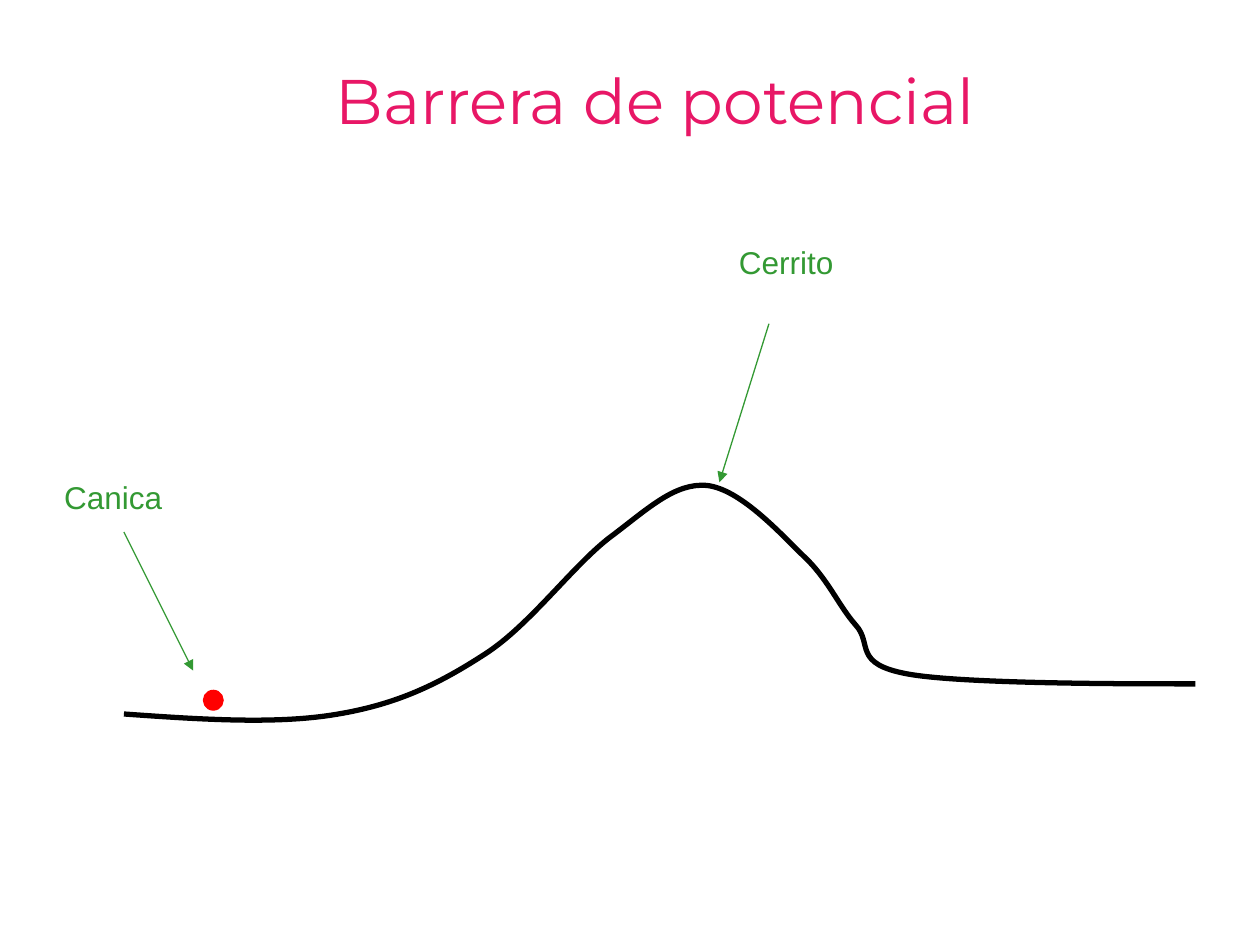
from pptx import Presentation
from pptx.dml.color import RGBColor
from pptx.enum.shapes import MSO_CONNECTOR, MSO_SHAPE
from pptx.enum.text import MSO_AUTO_SIZE, PP_ALIGN
from pptx.oxml.ns import qn
from pptx.util import Pt
from lxml import etree

PINK = RGBColor(0xE8, 0x17, 0x66)
GREEN = RGBColor(0x33, 0x99, 0x33)
RED = RGBColor(0xFF, 0x00, 0x00)
BLACK = RGBColor(0x00, 0x00, 0x00)
STRAIGHT = MSO_CONNECTOR.STRAIGHT
OVAL = MSO_SHAPE.OVAL
CENTER, LEFT = PP_ALIGN.CENTER, PP_ALIGN.LEFT
FIXED, GROW = MSO_AUTO_SIZE.NONE, MSO_AUTO_SIZE.SHAPE_TO_FIT_TEXT

deck = Presentation()
deck.slide_width, deck.slide_height = Pt(720), Pt(540)
slide = deck.slides.add_slide(deck.slide_layouts[6])
shapes = slide.shapes


def add_label(text, box, align, autosize, format_values, color):
    label = shapes.add_textbox(*map(Pt, box))
    label.text_frame.word_wrap = False
    label.text_frame.auto_size = autosize
    paragraph = label.text_frame.paragraphs[0]
    paragraph.alignment = align
    run = paragraph.add_run()
    run.text = text
    for name, value in format_values.items():
        setattr(run.font, name, value)
    run.font.color.rgb = color


add_label("Barrera de potencial", (173, 31.7, 402.5, 51.1), CENTER, FIXED,
          {"name": "Montserrat", "size": Pt(36)}, PINK)

hill_controls = [
    (70.8, 408),
    (114.5, 411.1), (157.7, 414), (192.2, 408.2),
    (226.8, 402.5), (250.6, 391), (277.2, 373.7),
    (303.1, 357.1), (328.3, 321.8), (349.9, 306),
    (370.8, 290.2), (385.9, 275.8), (403.9, 277.4),
    (422.6, 279.4), (445, 303.8), (458.9, 317.5),
    (473, 330.5), (478.8, 345.6), (488.9, 357.1),
    (499, 367.9), (486.7, 379.4), (519.1, 385.2),
    (551.5, 391), (651.6, 390.8), (683, 390.8),
]
hill_points = [(Pt(x), Pt(y)) for x, y in hill_controls]
hill_builder = shapes.build_freeform(*hill_points[0])
hill_builder.add_line_segments(hill_points[1:], close=False)
hill = hill_builder.convert_to_shape()
hill.shadow.inherit = False
hill.fill.background()
hill.line.color.rgb = BLACK
hill.line.width = Pt(3)

outline = next(hill.element.iter(qn("a:path")))
segments = outline.findall(qn("a:lnTo"))
for start in range(0, len(segments), 3):
    curve = etree.SubElement(outline, qn("a:cubicBezTo"))
    for segment in segments[start:start + 3]:
        curve.append(segment[0])
        outline.remove(segment)

marble = shapes.add_shape(OVAL, Pt(116.25), Pt(394.5), Pt(11.25), Pt(11.25))
marble.shadow.inherit = False
marble.fill.solid()
marble.fill.fore_color.rgb = RED
marble.line.color.rgb = RED
marble.line.width = Pt(0.75)

callouts = [
    ("Canica", (29.5, 269.6, 70.6, 28.8), (70.8, 304, 110.4, 383.2)),
    ("Cerrito", (415.2, 135.4, 68.4, 28.8), (439.4, 185, 411.1, 275.6)),
]
for text, box, ends in callouts:
    arrow = shapes.add_connector(STRAIGHT, *map(Pt, ends))
    arrow.line.color.rgb = GREEN
    arrow.line.width = Pt(0.75)
    arrow_properties = arrow.element.spPr
    etree.SubElement(arrow_properties.find(qn("a:ln")), qn("a:tailEnd"), type="triangle")
    etree.SubElement(arrow_properties, qn("a:effectLst"))
    add_label(text, box, LEFT, GROW, {"name": "Arial", "size": Pt(18)}, GREEN)

deck.save("out.pptx")
